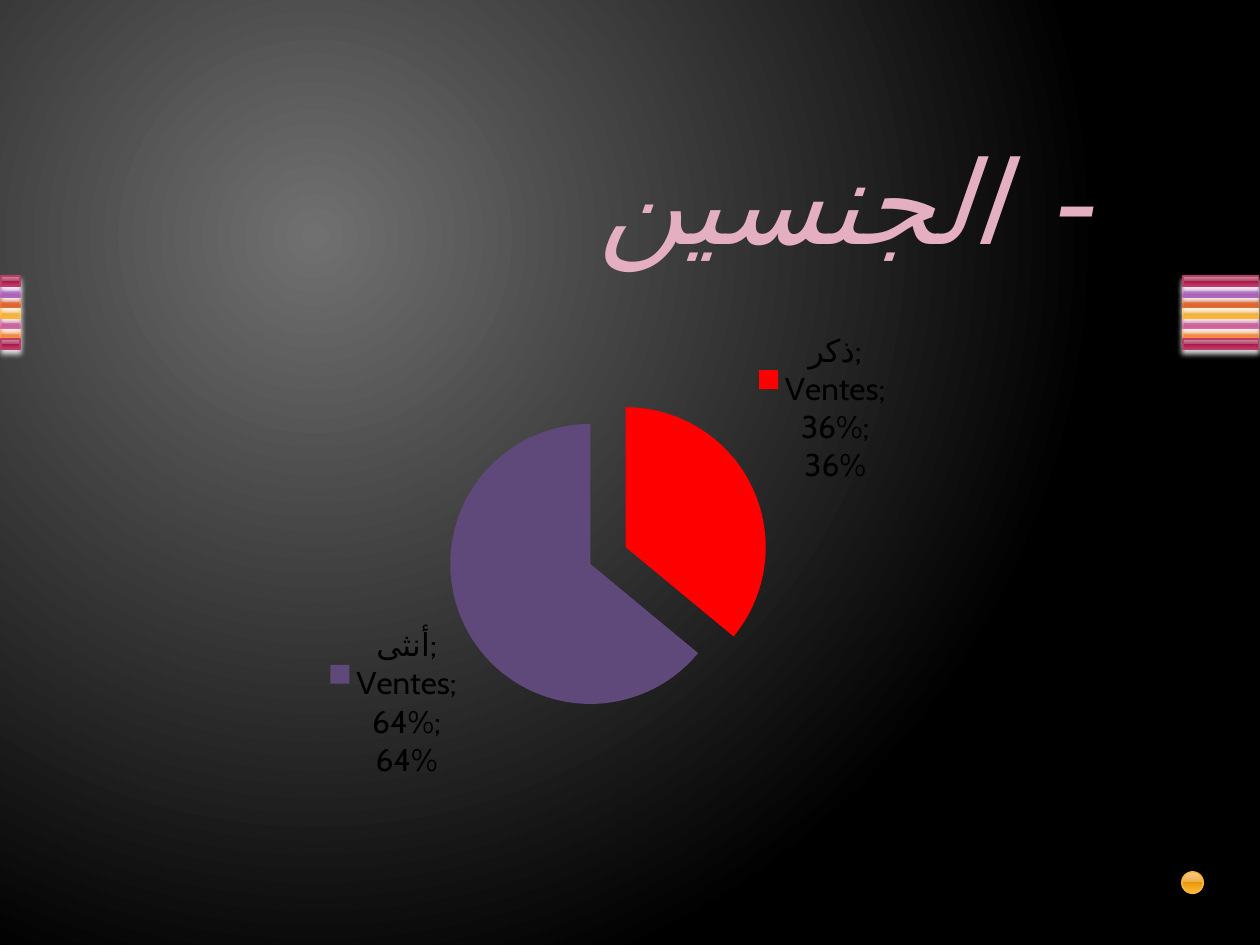
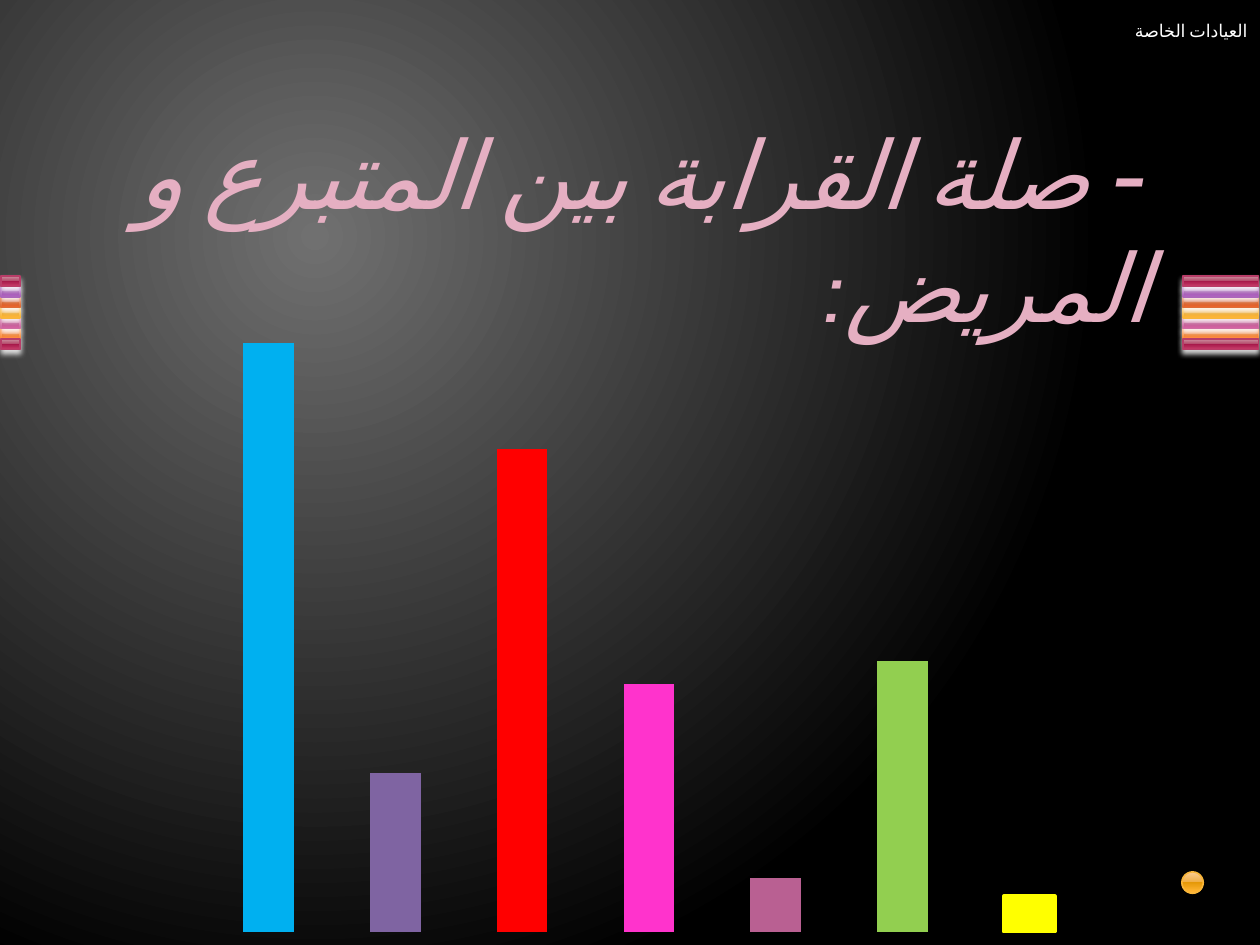
from lxml.etree import SubElement
from pptx import Presentation
from pptx.chart.data import CategoryChartData
from pptx.dml.color import RGBColor
from pptx.enum.chart import XL_CHART_TYPE, XL_LABEL_POSITION
from pptx.enum.shapes import MSO_SHAPE
from pptx.enum.text import MSO_ANCHOR, MSO_AUTO_SIZE, PP_ALIGN
from pptx.oxml import parse_xml
from pptx.oxml.ns import nsdecls, qn
from pptx.util import Inches, Pt

GENDER = {
    "title": "-  الجنسين",
    "title_size": 66,
    "title_place": (1.56, 0.97, 7.27, 1.63),
    "series": "Ventes",
    "chart_place": (1.87, 2.03, 5.63, 4.45),
    "plot": (0.3, 0.25, 0.45, 0.57),
    "rows": [("ذكر", 0.36, "FF0000"), ("أنثى", 0.64, "5F497A")],
}
KINSHIP = {
    "title": "- صلة القرابة بين المتبرع و المريض:",
    "title_size": 54,
    "title_place": (0.39, 0.86, 8.83, 1.85),
    "series": "Series 1",
    "chart_place": (1.48, 2.19, 7.34, 5.31),
    "plot": (0.02, 0.1, 0.96, 0.88),
    "rows": [
        ("1", 100, "00B0F0"), ("2", 27, "7F64A2"), ("3", 82, "FF0000"),
        ("4", 42, "FF33CC"), ("5", 9, "B96092"), ("6", 46, "92CF50"),
        ("7", 6, "FFFF00"),
    ],
}
HEADER = "العيادات الخاصة"

GLOSS_STOPS = (0, 49, 49, 92, 100)
GLOSS = {
    "rose": (("CE94A2", "B34869", "A61749", "C13764", "CA5D7C"), "B83D68"),
    "purple": (("C6A2D0", "A666B4", "8F3EA1", "AD5DBF", "BA76CA"), "AC66BB"),
    "rust": (("E7A493", "D66B42", "CC4809", "E9642C", "F07B55"), "DE6C36"),
    "amber": (("FBCC93", "EFAE43", "E59807", "FFB432", "FFBE5F"), "F9B639"),
    "pink": (("DDA4C1", "C66B9D", "B34181", "D361A0", "DC79AE"), "CF6DA4"),
    "orange": (("FBB494", "F08745", "E5670B", "FF8736", "FF9961"), "FA8D3D"),
}
BANDS_BACK_TO_FRONT = (
    (5, "orange"), (4, "pink"), (3, "amber"), (2, "rust"),
    (1, "purple"), (0, "rose"), (6, "rose"),
)
BAND_COLUMNS = ((0.01, 0.15), (9.39, 0.6))
BAND_TOP, BAND_HEIGHT = 2.19, 0.25 / 3
TITLE_COLOR, BACKGROUND, GLOW = "E5AFC2", ("707070", "000000"), "FFFFFF"
ARABIC_FONT = "Cabin"


def color(value):
    return RGBColor.from_string(value)


def inches(place):
    return [Inches(length) for length in place]


def gradient(stops, direction):
    steps = "".join(
        f'<a:gs pos="{position * 1000}"><a:srgbClr val="{value}"/></a:gs>'
        for position, value in stops
    )
    return parse_xml(
        f'<a:gradFill {nsdecls("a")} rotWithShape="1"><a:gsLst>{steps}</a:gsLst>'
        f"{direction}</a:gradFill>"
    )


def replace_fill(properties, fill):
    properties.replace(properties.find(qn("a:solidFill")), fill)


def glossy_shape(shapes, kind, place, name, shadow=True):
    fills, line_color = GLOSS[name]
    shape = shapes.add_shape(kind, *inches(place))
    shape.shadow.inherit = False
    shape.fill.solid()
    shape.line.color.rgb = color(line_color)
    shape.line.width = Pt(0.9)
    properties = shape.element.spPr
    replace_fill(
        properties,
        gradient(zip(GLOSS_STOPS, fills), '<a:lin ang="5400000" scaled="0"/>'),
    )
    if shadow:
        outer = SubElement(
            properties.find(qn("a:effectLst")), qn("a:outerShdw"),
            blurRad=str(Pt(3.1)), dist=str(Pt(2)), dir="5400000",
            algn="ctr", rotWithShape="0",
        )
        tint = SubElement(outer, qn("a:srgbClr"), val=GLOW)
        SubElement(tint, qn("a:alpha"), val="83000")
    return shape


def decorate_layout(layout, page):
    layout.background.fill.solid()
    replace_fill(
        layout.background.element.find(f"{qn('p:bg')}/{qn('p:bgPr')}"),
        gradient(
            zip((0, 100), BACKGROUND),
            '<a:path path="circle">'
            '<a:fillToRect l="50000" t="50000" r="100000" b="100000"/></a:path>',
        ),
    )
    tree = layout.shapes.element
    for left, width in BAND_COLUMNS:
        group = page.shapes.add_group_shape()
        for row, name in BANDS_BACK_TO_FRONT:
            place = (left, BAND_TOP + row * BAND_HEIGHT, width, BAND_HEIGHT)
            glossy_shape(group.shapes, MSO_SHAPE.RECTANGLE, place, name)
        tree.append(group.element)
    dot = glossy_shape(
        page.shapes, MSO_SHAPE.OVAL, (9.38, 6.92, 0.17, 0.17), "amber", shadow=False
    )
    tree.append(dot.element)
    for number, node in enumerate(tree.iter(qn("p:cNvPr")), 1):
        node.set("id", str(number))


def write_text(box, text, *, size, font, fill, italic=False, outline=None,
               anchor=MSO_ANCHOR.TOP, wrap=True):
    frame = box.text_frame
    frame.word_wrap = wrap
    frame.auto_size = MSO_AUTO_SIZE.SHAPE_TO_FIT_TEXT
    frame.vertical_anchor = anchor
    para = frame.paragraphs[0]
    para.alignment = PP_ALIGN.RIGHT
    para._p.get_or_add_pPr().set("rtl", "1")
    span = para.add_run()
    span.text = text
    span.font.size = Pt(size)
    span.font.name = font
    span.font.italic = italic
    span.font.color.rgb = color(fill)
    properties = span.font._element
    properties.set("lang", "ar-DZ")
    properties.find(qn("a:latin")).addnext(
        parse_xml(f'<a:cs {nsdecls("a")} typeface="{ARABIC_FONT}"/>')
    )
    if outline:
        properties.insert(0, parse_xml(
            f'<a:ln {nsdecls("a")} w="{Pt(1.45)}"><a:solidFill>'
            f'<a:srgbClr val="{outline}"/></a:solidFill></a:ln>'
        ))


def add_title(page, topic):
    title = page.shapes.title
    title.left, title.top, title.width, title.height = inches(topic["title_place"])
    write_text(title, topic["title"], size=topic["title_size"], font="Lato",
               fill=TITLE_COLOR, italic=True, outline="FFFFFF")


def place_plot(chart, place):
    area = chart.plots[0]._element.getparent()
    for old in area.findall(qn("c:layout")):
        area.remove(old)
    sizes = "".join(
        f'<c:{name} val="{value}"/>' for name, value in zip("xywh", place)
    )
    area.insert(0, parse_xml(
        f'<c:layout {nsdecls("c")}><c:manualLayout><c:layoutTarget val="inner"/>'
        f'<c:xMode val="edge"/><c:yMode val="edge"/>{sizes}'
        "</c:manualLayout></c:layout>"
    ))


def add_chart(page, topic, kind, number_format):
    names, values, colors = zip(*topic["rows"])
    data = CategoryChartData(number_format=number_format)
    data.categories = names
    data.add_series(topic["series"], values)
    chart = page.shapes.add_chart(kind, *inches(topic["chart_place"]), data).chart
    chart.has_title = False
    chart.has_legend = False
    chart.font.size = Pt(18)
    chart.font.name = "Cabin"
    chart.font.color.rgb = color("000000")
    for index, value in enumerate(colors):
        fill = chart.series[0].points[index].format.fill
        fill.solid()
        fill.fore_color.rgb = color(value)
    place_plot(chart, topic["plot"])
    return chart


def add_gender_pie(page):
    chart = add_chart(page, GENDER, XL_CHART_TYPE.PIE, "0%")
    plot = chart.plots[0]
    chart.series[0]._element.find(qn("c:dPt")).addprevious(
        parse_xml(f'<c:explosion {nsdecls("c")} val="14"/>')
    )
    plot.has_data_labels = True
    labels = plot.data_labels
    labels.number_format = "0%"
    labels.number_format_is_linked = False
    labels.position = XL_LABEL_POSITION.OUTSIDE_END
    labels.show_legend_key = True
    labels.show_value = True
    labels.show_category_name = True
    labels.show_series_name = True
    labels.show_percentage = True
    separator = parse_xml(f'<c:separator {nsdecls("c")}>;\n</c:separator>')
    labels._element.find(qn("c:showBubbleSize")).addnext(separator)


def add_kinship_columns(page):
    chart = add_chart(page, KINSHIP, XL_CHART_TYPE.COLUMN_CLUSTERED, "General")
    plot = chart.plots[0]
    plot.gap_width = 150
    plot.vary_by_categories = False
    chart.value_axis.minimum_scale = 0
    chart.value_axis.maximum_scale = 100
    for axis in (chart.category_axis, chart.value_axis):
        axis.has_major_gridlines = False
        axis.visible = False
    last_line = chart.series[0].points[6].format.line
    last_line.color.rgb = color("FFFF00")
    last_line.width = Pt(2.25)


def main():
    deck = Presentation()
    deck.slide_width, deck.slide_height = Inches(10), Inches(7.5)
    layout = deck.slide_layouts[5]

    gender_page = deck.slides.add_slide(layout)
    decorate_layout(layout, gender_page)
    add_title(gender_page, GENDER)
    add_gender_pie(gender_page)

    kinship_page = deck.slides.add_slide(layout)
    add_title(kinship_page, KINSHIP)
    add_kinship_columns(kinship_page)
    header = kinship_page.shapes.add_textbox(*inches((0, 0.12, 10, 0.25)))
    write_text(header, HEADER, size=10, font="Calibri", fill="FFFFFF",
               anchor=MSO_ANCHOR.MIDDLE, wrap=False)

    deck.save("out.pptx")


if __name__ == "__main__":
    main()
